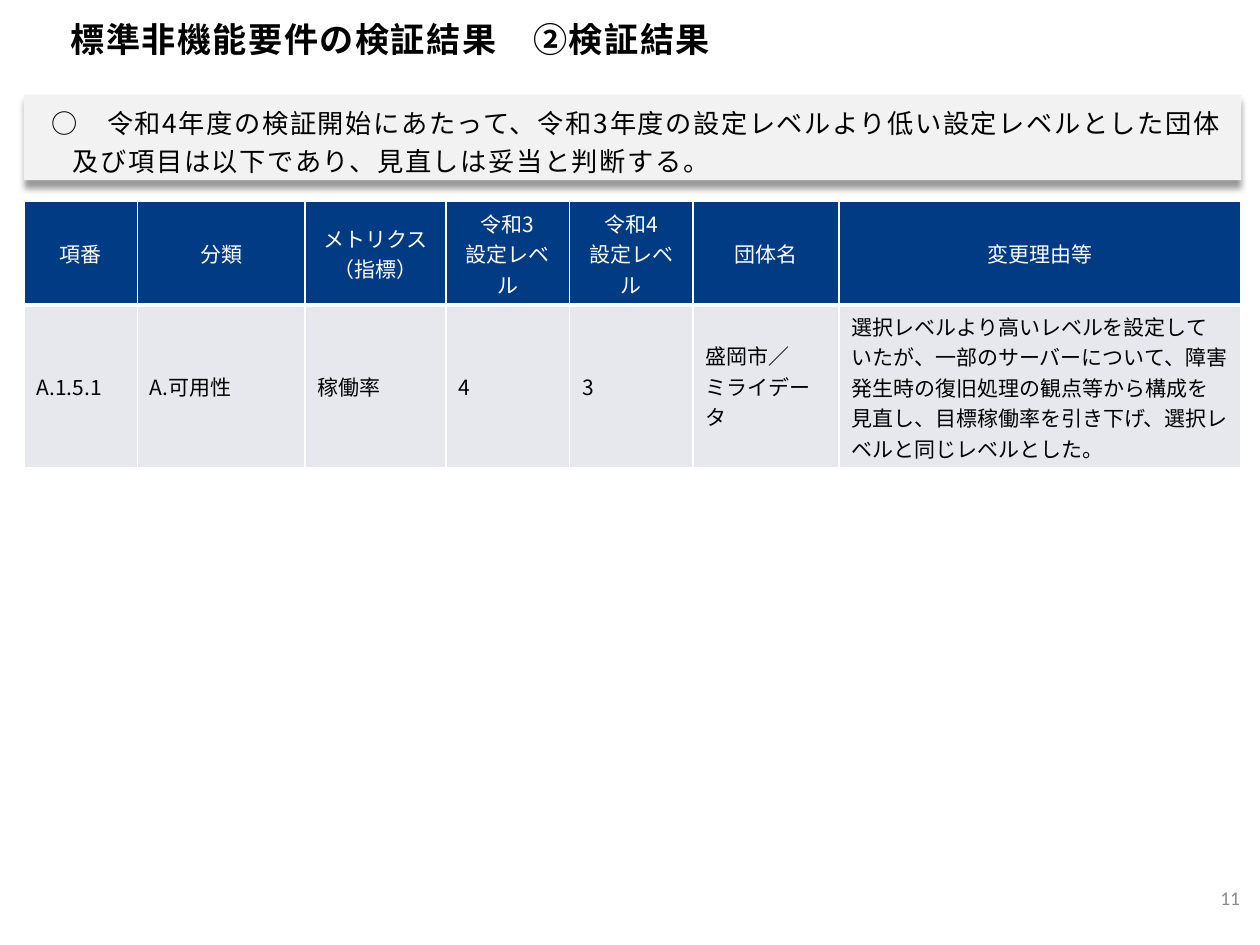
import pptx
import pptx.util
import pptx.dml.color
import pptx.enum.shapes
import pptx.enum.text
import pptx.oxml
from pptx.oxml.ns import qn
from lxml import etree

Inches, Pt = pptx.util.Inches, pptx.util.Pt
RGB = pptx.dml.color.RGBColor.from_string
ALIGN = pptx.enum.text.PP_ALIGN
ANCHOR = pptx.enum.text.MSO_ANCHOR
FIT = pptx.enum.text.MSO_AUTO_SIZE

C = {"text": "000000", "white": "FFFFFF", "header": "003B83", "body": "E7E8ED",
     "summary": "F2F2F2", "number": "8C8C8C"}
JP = "Noto Sans CJK JP"


def style(p, size, color, font=JP, bold=False, spacing=0):
    """Format every run for both Latin and East Asian text; spacing is in points."""
    for r in p.runs:
        r.font.size, r.font.bold, r.font.name = Pt(size), bold, font
        r.font.color.rgb = RGB(C[color])
        rPr = r.font._element
        etree.SubElement(rPr, qn("a:ea")).set("typeface", font)
        if spacing:
            rPr.set("spc", str(round(spacing * 100)))


def set_borders(cell, widths):
    """Draw white left, right, top and bottom cell borders, widths in points."""
    tcPr = cell._tc.get_or_add_tcPr()
    for i, (side, width) in enumerate(zip("LRTB", widths)):
        ln = etree.Element(qn(f"a:ln{side}"), w=str(Pt(width)))
        fill = etree.SubElement(ln, qn("a:solidFill"))
        etree.SubElement(fill, qn("a:srgbClr")).set("val", C["white"])
        tcPr.insert(i, ln)


prs = pptx.Presentation()
prs.slide_width, prs.slide_height = Inches(10), Inches(7.5)
s = prs.slides.add_slide(prs.slide_layouts[5])

# Title
title = s.shapes.title
title.left, title.top, title.width, title.height = map(Inches, (0.56, 0.06, 9.5, 0.53))
tf = title.text_frame
tf.text = "標準非機能要件の検証結果　②検証結果"
tf.auto_size = FIT.NONE
tf.word_wrap = True
tf.vertical_anchor = ANCHOR.BOTTOM
tf.margin_left = tf.margin_top = tf.margin_right = 0
tf.margin_bottom = Inches(0.12)
p = tf.paragraphs[0]
p.alignment = ALIGN.LEFT
p.line_spacing = 1.1
style(p, 19.5, "text", bold=True, spacing=0.8)

# Summary box
sp = s.shapes.add_shape(pptx.enum.shapes.MSO_SHAPE.RECTANGLE,
                        Inches(0.19), Inches(0.75), Inches(9.66), Inches(0.68))
sp.fill.solid()
sp.fill.fore_color.rgb = RGB(C["summary"])
sp.line.fill.background()
sp.shadow.inherit = False
effects = sp._element.spPr.find(qn("a:effectLst"))
shadow = etree.SubElement(effects, qn("a:outerShdw"), blurRad=str(Pt(4)), dist=str(Pt(4)),
                          dir="5400000", algn="t", rotWithShape="0")
color = etree.SubElement(shadow, qn("a:srgbClr"), val=C["text"])
etree.SubElement(color, qn("a:alpha"), val="40000")
tf = sp.text_frame
tf.text = ("○　令和4年度の検証開始にあたって、令和3年度の設定レベルより低い設定レベルとした"
           "団体及び項目は以下であり、見直しは妥当と判断する。")
tf.word_wrap = True
tf.auto_size = FIT.SHAPE_TO_FIT_TEXT
tf.vertical_anchor = ANCHOR.TOP
p = tf.paragraphs[0]
p.alignment = ALIGN.LEFT
p.line_spacing = 1.2
p.space_after = Pt(4.5)
pPr = p._p.get_or_add_pPr()
pPr.set("marL", str(Inches(0.29)))
pPr.set("indent", str(Inches(-0.17)))
style(p, 15, "text", spacing=0.9)

# Results table
rows = [
    ["項番", "分類", "メトリクス（指標）", "令和3\v設定レベル", "令和4\v設定レベル",
     "団体名", "変更理由等"],
    ["A.1.5.1", "A.可用性", "稼働率", "4", "3", "盛岡市／\vミライデータ",
     "選択レベルより高いレベルを設定していたが、一部のサーバーについて、障害発生時の"
     "復旧処理の観点等から構成を見直し、目標稼働率を引き下げ、選択レベルと同じレベルとした。"],
]
col_widths = [0.9, 1.33, 1.12, 0.98, 0.98, 1.16, 3.19]
row_heights = [0.82, 1.29]
table = s.shapes.add_table(len(rows), len(col_widths), Inches(0.19), Inches(1.6),
                           Inches(9.66), Inches(2.11)).table
for col, width in zip(table.columns, col_widths):
    col.width = Inches(width)
for row, height in zip(table.rows, row_heights):
    row.height = Inches(height)
for i, texts in enumerate(rows):
    header = i == 0
    for j, text in enumerate(texts):
        cell = table.cell(i, j)
        cell.vertical_anchor = ANCHOR.MIDDLE
        cell.fill.solid()
        cell.fill.fore_color.rgb = RGB(C["header" if header else "body"])
        set_borders(cell, (1, 1, 1, 3) if header else (1, 1, 3, 1))
        p = cell.text_frame.paragraphs[0]
        p.text = text
        p.alignment = ALIGN.CENTER if header else ALIGN.JUSTIFY if j < 2 else ALIGN.LEFT
        style(p, 12, "white" if header else "text")

# Page number
tf = s.shapes.add_textbox(Inches(7.69), Inches(6.94), Inches(2.25), Inches(0.37)).text_frame
tf.text = "11"
tf.word_wrap = True
tf.vertical_anchor = ANCHOR.MIDDLE
p = tf.paragraphs[0]
p.alignment = ALIGN.RIGHT
style(p, 11.1, "number", font="Calibri")

prs.save("out.pptx")
